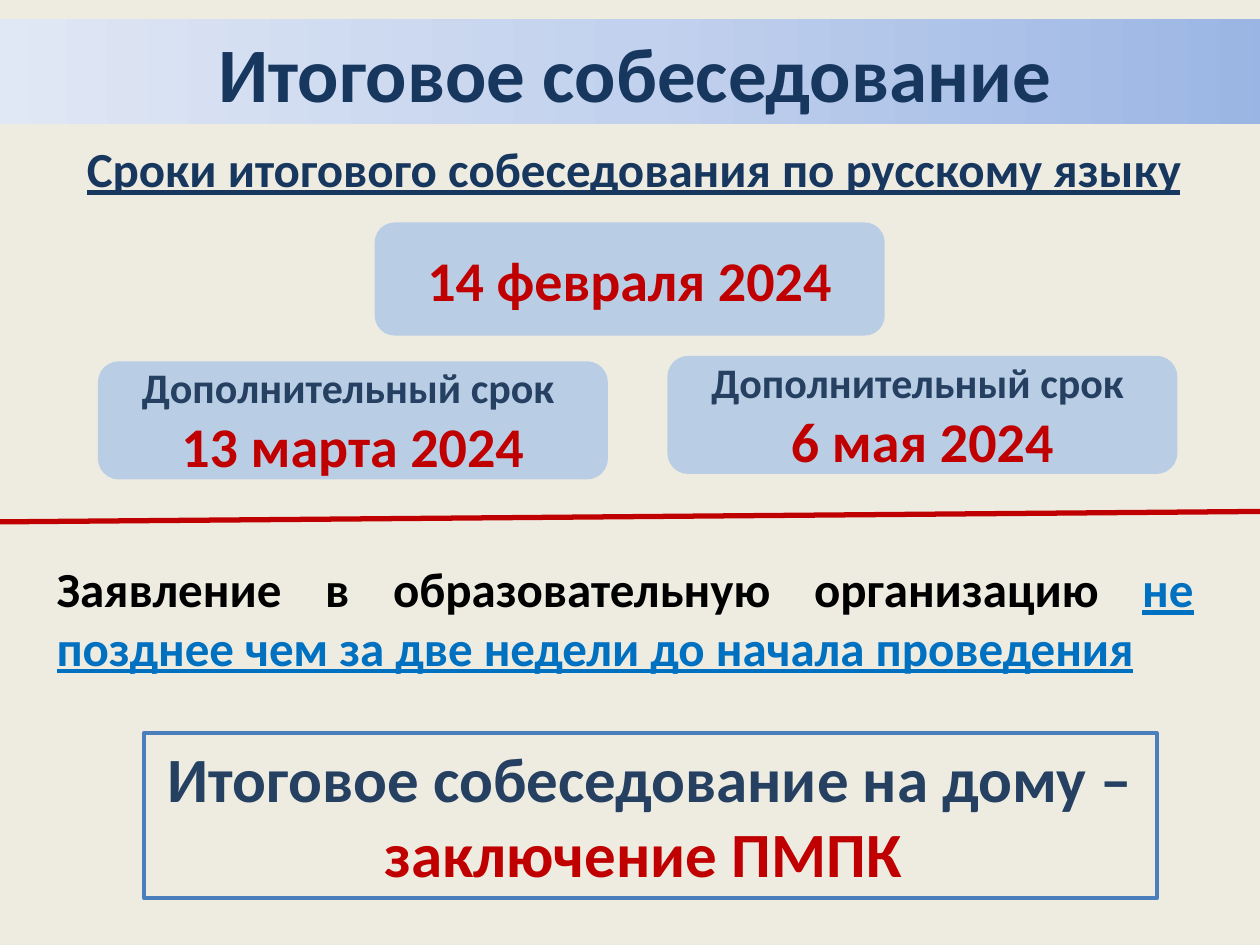
from copy import deepcopy

from pptx import Presentation
from pptx.dml.color import RGBColor
from pptx.enum.shapes import MSO_CONNECTOR as Connector, MSO_SHAPE as Shape
from pptx.enum.text import MSO_ANCHOR as Anchor, MSO_AUTO_SIZE as AutoSize, PP_ALIGN as Align
from pptx.oxml.ns import qn
from pptx.util import Cm, Pt

THEME = {
    "font": "Calibri",
    "colors": {
        "page": "EEECE1", "heading": "17375E", "label": "254061", "accent": "C00000",
        "body": "000000", "deadline": "0070C0", "card": "B9CDE5", "frame": "4B7EBC",
    },
    "band": [(0, "9AB5E4"), (0.5, "C2D1ED"), (1, "E1E8F5")],
    "sizes": {"title": 44, "note": 36, "date": 32, "body": 28, "label": 24},
}


def color(name):
    return RGBColor.from_string(THEME["colors"][name])


def write(box, paragraphs, align, anchor=Anchor.TOP, wrap=True):
    """Fill a box with paragraphs of (text, size, color, underline) spans."""
    frame = box.text_frame
    settings = {"word_wrap": wrap, "auto_size": AutoSize.NONE, "vertical_anchor": anchor}
    for name, value in settings.items():
        setattr(frame, name, value)
    for index, spans in enumerate(paragraphs):
        para = frame.paragraphs[0] if index == 0 else frame.add_paragraph()
        para.alignment = align
        for text, size, tone, underline in spans:
            span = para.add_run()
            span.text = text
            formats = {"name": THEME["font"], "size": Pt(THEME["sizes"][size]),
                       "bold": True, "underline": underline}
            for name, value in formats.items():
                setattr(span.font, name, value)
            span.font.color.rgb = color(tone)


deck = Presentation()
deck.slide_width, deck.slide_height = Cm(25.4), Cm(19.05)
page = deck.slides.add_slide(deck.slide_layouts[5])
page.background.fill.solid()
page.background.fill.fore_color.rgb = color("page")

# Title on a gradient band
title = page.shapes.title
position = {"left": Cm(-0.3), "top": Cm(0.38), "width": Cm(26.21), "height": Cm(2.13)}
for name, value in position.items():
    setattr(title, name, value)
title.fill.gradient()
title.fill.gradient_angle = 180
stop_list = title.element.spPr.find(qn("a:gradFill")).find(qn("a:gsLst"))
stop_list.append(deepcopy(stop_list[-1]))
for stop, (place, tone) in zip(title.fill.gradient_stops, THEME["band"]):
    stop.position = place
    stop.color.rgb = RGBColor.from_string(tone)
write(title, [[("Итоговое собеседование", "title", "heading", False)]], Align.CENTER)

# Subtitle
subtitle = page.shapes.add_textbox(Cm(1.5), Cm(2.67), Cm(22.81), Cm(1.45))
write(subtitle, [[("Сроки итогового собеседования по русскому языку",
                   "body", "heading", True)]], Align.LEFT, wrap=False)

# Date cards: the main date and two additional ones
extra = "Дополнительный срок "
cards = [
    (7.59, 4.52, 2.21, None, "14 февраля 2024"),
    (2.01, 7.32, 2.31, extra, "13 марта 2024"),
    (13.49, 7.21, 2.31, extra, "6 мая 2024"),
]
for left, top, height, label, date in cards:
    card = page.shapes.add_shape(Shape.ROUNDED_RECTANGLE, Cm(left), Cm(top), Cm(10.21), Cm(height))
    card.shadow.inherit = False
    card.fill.solid()
    card.fill.fore_color.rgb = card.line.color.rgb = color("card")
    card.line.width = Pt(2)
    lines = [[(label, "label", "label", False)]] if label else []
    write(card, lines + [[(date, "date", "accent", False)]], Align.CENTER, Anchor.MIDDLE)

# Divider
divider = page.shapes.add_connector(Connector.STRAIGHT, Cm(0), Cm(10.52), Cm(25.4), Cm(10.31))
divider.line.color.rgb = color("accent")
divider.line.width = Pt(3)
properties = divider.element.spPr
properties.append(properties.makeelement(qn("a:effectLst"), {}))

# Application deadline
deadline = page.shapes.add_textbox(Cm(0.89), Cm(11.13), Cm(23.42), Cm(2.64))
write(deadline, [[
    ("Заявление в образовательную организацию ", "body", "body", False),
    ("не позднее чем за две недели до начала проведения", "body", "deadline", True),
]], Align.JUSTIFY)

# Framed note
note = page.shapes.add_shape(Shape.RECTANGLE, Cm(2.9), Cm(14.78), Cm(20.42), Cm(3.33))
note.shadow.inherit = False
note.fill.background()
note.line.color.rgb = color("frame")
note.line.width = Pt(2.25)
write(note, [[
    ("Итоговое собеседование на дому – ", "note", "label", False),
    ("заключение ПМПК ", "note", "accent", False),
]], Align.CENTER)

deck.save("out.pptx")
